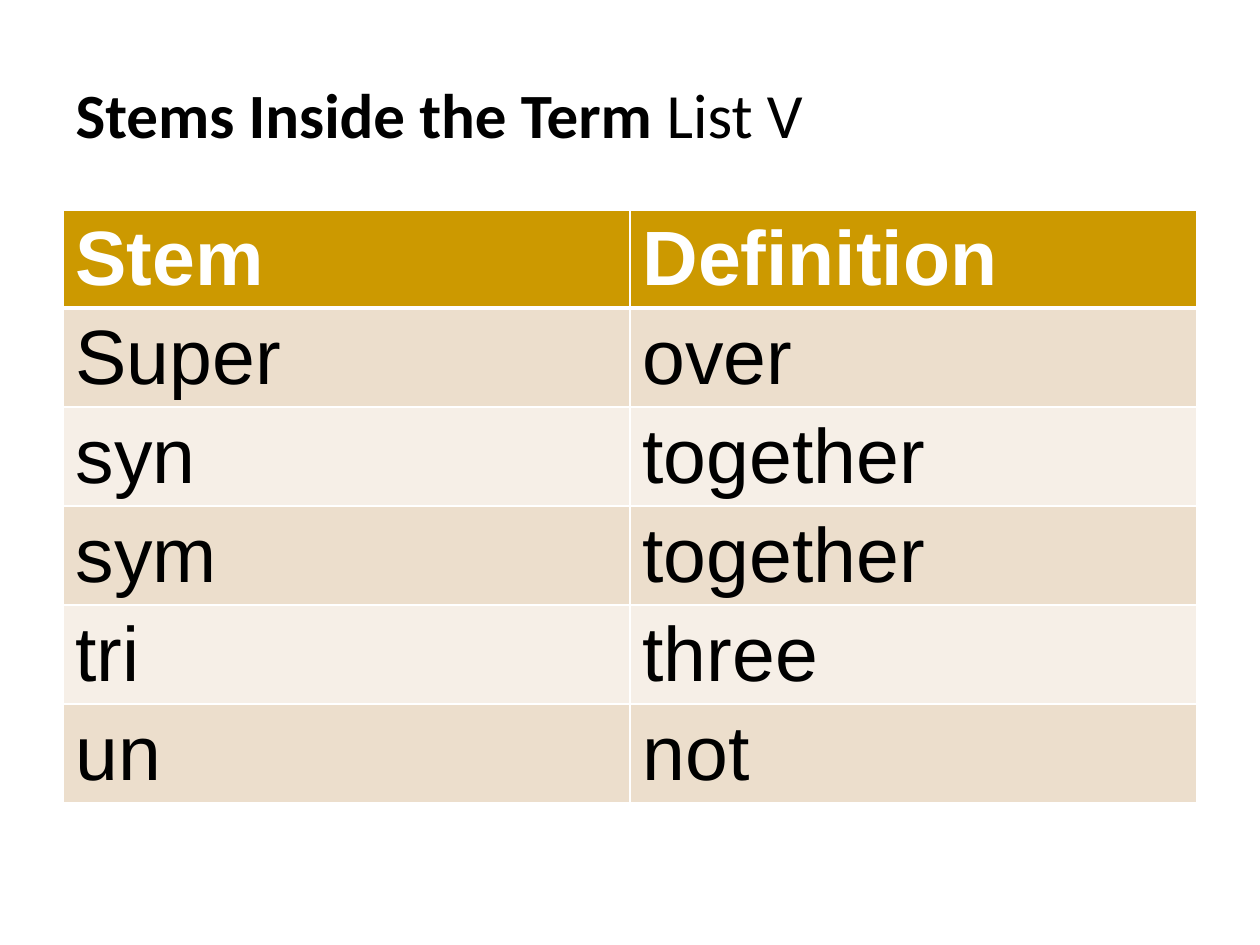
from dataclasses import dataclass

from lxml import etree
from pptx import Presentation
from pptx import util as u
from pptx.dml.color import RGBColor
from pptx.enum import text
from pptx.oxml.ns import qn

PX_PER_INCH = 126


def px(n):
    return u.Emu(round(n * u.Inches(1) / PX_PER_INCH))


@dataclass(frozen=True)
class Theme:
    title_font: str = "Calibri"
    table_font: str = "Arial"
    title_size: int = 36
    table_size: int = 44
    ink: str = "000000"
    white: str = "FFFFFF"
    header: str = "CC9900"
    bands: tuple = ("ECDECC", "F6EFE7")
    rule: int = 1
    header_rule: int = 3


class SlideBuilder:
    def __init__(self, slide, theme):
        self.slide = slide
        self.theme = theme

    def title(self, bold_part, plain_part, left, top, width, height):
        title = self.slide.shapes.title
        title.left, title.top, title.width, title.height = map(
            px, (left, top, width, height))
        frame = title.text_frame
        frame.auto_size = text.MSO_AUTO_SIZE.NONE
        frame.vertical_anchor = text.MSO_ANCHOR.BOTTOM
        heading = frame.paragraphs[0]
        heading.alignment = text.PP_ALIGN.LEFT
        self.font(heading, self.theme.title_font, self.theme.title_size, self.theme.ink)
        for words, bold in ((bold_part, True), (plain_part, False)):
            run = heading.add_run()
            run.text = words
            run.font.bold = bold

    def table(self, rows, left, top, width, header_height, row_height):
        heights = [header_height] + [row_height] * (len(rows) - 1)
        table = self.slide.shapes.add_table(
            len(rows), len(rows[0]),
            px(left), px(top), px(width), px(sum(heights))).table
        for r, (words, height) in enumerate(zip(rows, heights)):
            table.rows[r].height = px(height)
            for c, word in enumerate(words):
                self.cell(table.cell(r, c), word, r)

    def cell(self, cell, word, row):
        theme = self.theme
        is_header = row == 0
        cell.margin_top, cell.margin_bottom = px(6 if is_header else 7), px(2)
        # The heavy rule lies between the header and the first word
        self.border(cell, "lnL", theme.rule)
        self.border(cell, "lnR", theme.rule)
        self.border(cell, "lnT", theme.header_rule if row == 1 else theme.rule)
        self.border(cell, "lnB", theme.header_rule if is_header else theme.rule)
        cell.fill.solid()
        cell.fill.fore_color.rgb = RGBColor.from_string(
            theme.header if is_header else theme.bands[(row - 1) % 2])
        cell.text = word
        entry = cell.text_frame.paragraphs[0]
        self.font(entry, theme.table_font, theme.table_size,
                  theme.white if is_header else theme.ink)
        entry.font.bold = is_header

    def border(self, cell, side, points):
        properties = cell._tc.get_or_add_tcPr()
        line = etree.SubElement(properties, qn("a:" + side), w=str(u.Pt(points)))
        fill = etree.SubElement(line, qn("a:solidFill"))
        etree.SubElement(fill, qn("a:srgbClr"), val=self.theme.white)

    def font(self, paragraph, name, size, color):
        paragraph.font.name = name
        paragraph.font.size = u.Pt(size)
        paragraph.font.color.rgb = RGBColor.from_string(color)


def main():
    deck = Presentation()
    deck.slide_width, deck.slide_height = px(1260), px(945)
    title_only = deck.slide_layouts[5]
    builder = SlideBuilder(deck.slides.add_slide(title_only), Theme())

    # Heading
    builder.title("Stems Inside the Term ", "List V", 63, 10, 935, 147)

    # Stems and their definitions
    stems = [
        ("Stem", "Definition"),
        ("Super", "over"),
        ("syn", "together"),
        ("sym", "together"),
        ("tri", "three"),
        ("un", "not"),
    ]
    builder.table(stems, 63, 210, 1134, header_height=98, row_height=99)

    deck.save("out.pptx")


if __name__ == "__main__":
    main()
